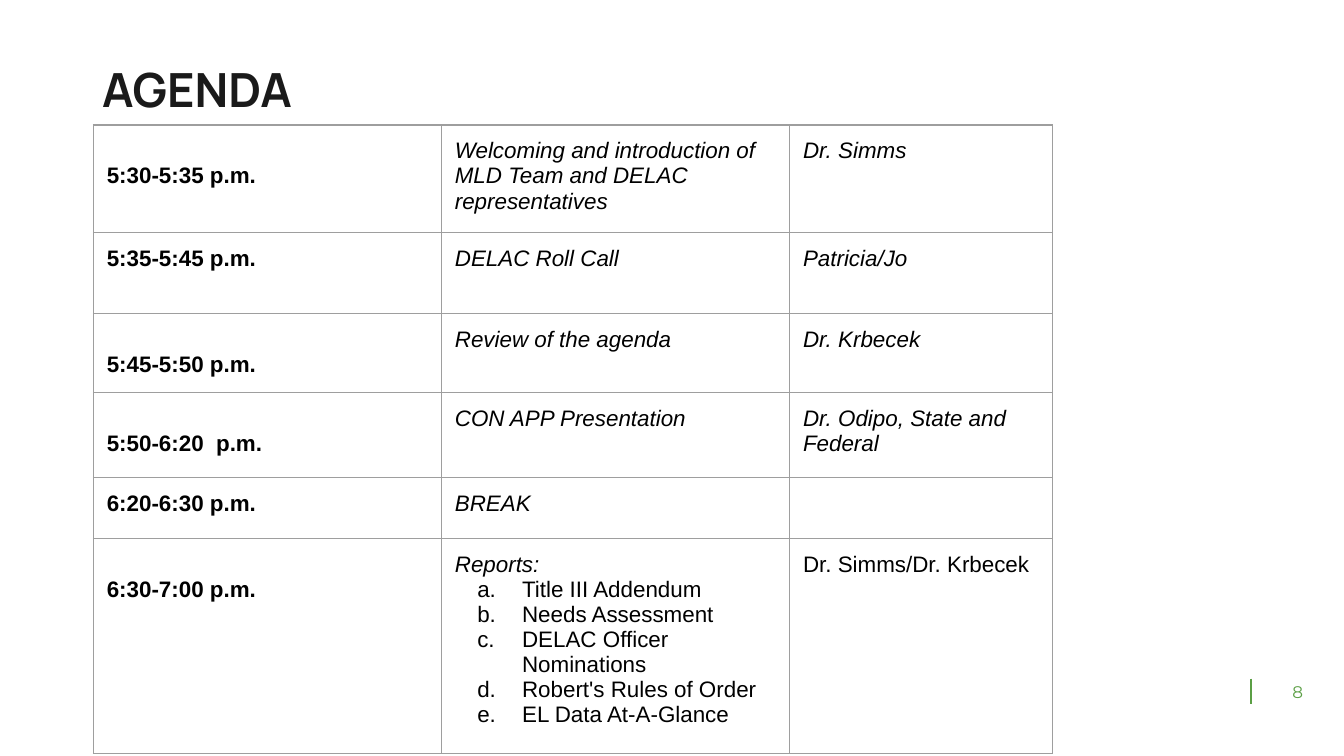
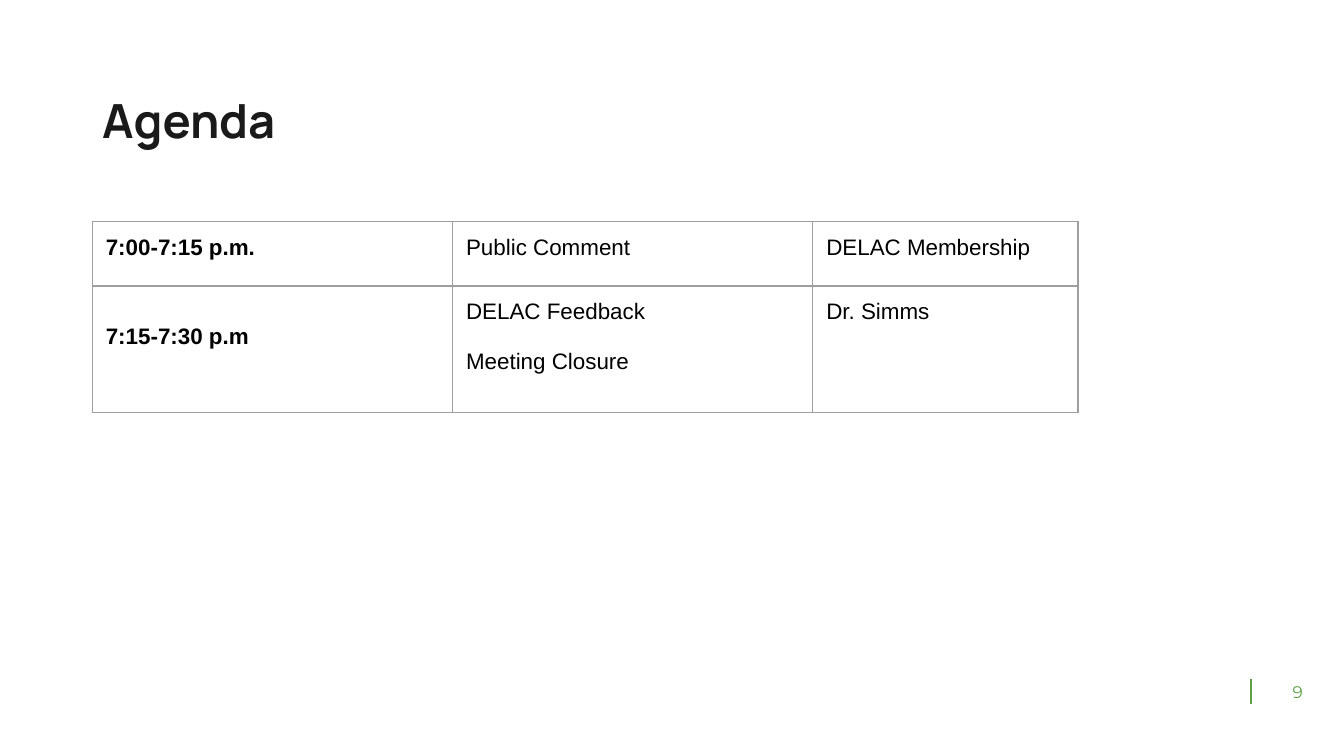
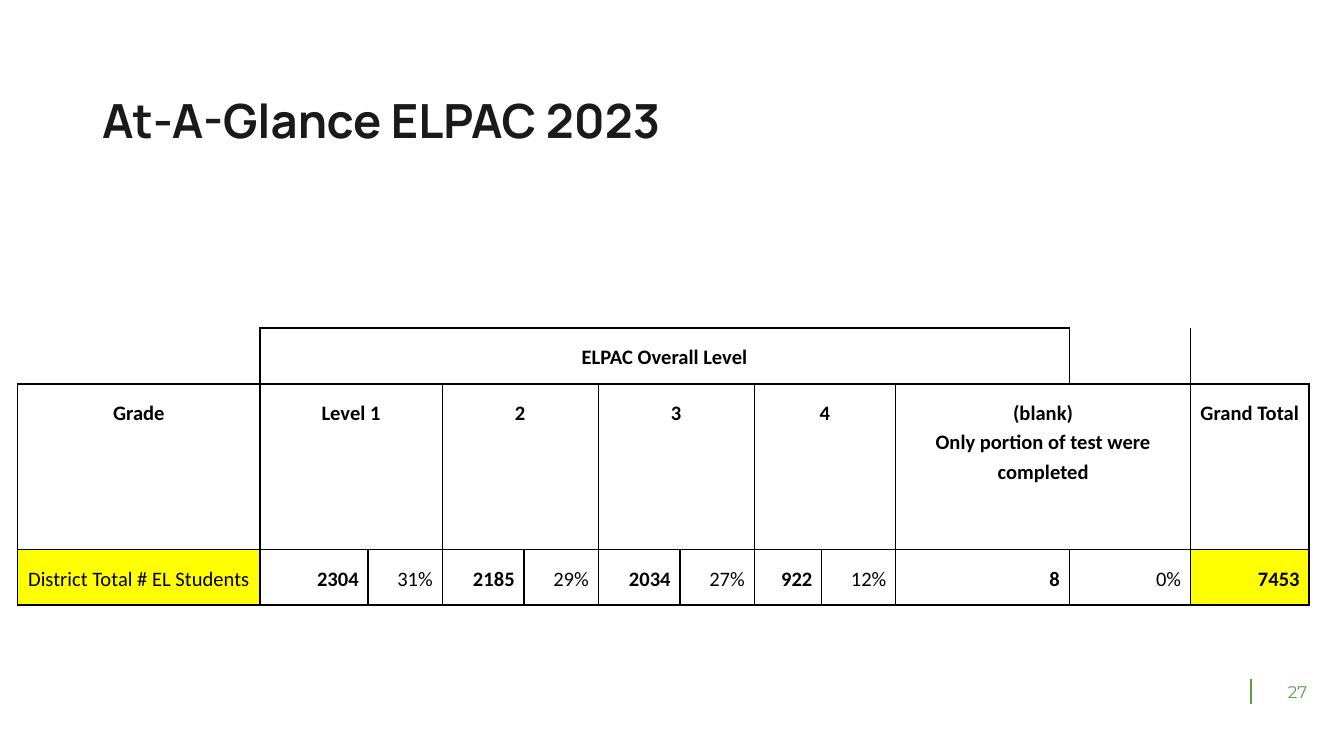
from lxml import etree
from pptx import Presentation
from pptx.dml.color import RGBColor
from pptx.enum.shapes import MSO_CONNECTOR
from pptx.enum.text import MSO_ANCHOR, MSO_AUTO_SIZE, PP_ALIGN
from pptx.oxml.ns import qn
from pptx.util import Pt

STRAIGHT = MSO_CONNECTOR.STRAIGHT
TOP, MIDDLE = MSO_ANCHOR.TOP, MSO_ANCHOR.MIDDLE
NO_AUTOFIT = MSO_AUTO_SIZE.NONE
LEFT, CENTER, RIGHT = PP_ALIGN.LEFT, PP_ALIGN.CENTER, PP_ALIGN.RIGHT

COLORS = {
    "green": "5B9F45",
    "title": "1A1A1A",
    "text": "000000",
    "agenda_border": "9E9E9E",
    "score_border": "000000",
    "highlight": "FFFF00",
}
TITLE_ONLY = 5
AGENDA_LINE = 13.4
AGENDA_INSET = 7.2
FOOTER_LEFT = 670.3
ALL_SIDES = "LRTB"

AGENDA_COLUMNS = [186.5, 186.5, 141]
# Each row: height, time, lines the time is lowered by, topic, presenter
MEETING_ROWS = [
    (54.6, "5:30-5:35 p.m.", 1,
     "Welcoming and introduction of MLD Team and DELAC representatives", "Dr. Simms"),
    (43.4, "5:35-5:45 p.m.", 0, "DELAC Roll Call", "Patricia/Jo"),
    (41.2, "5:45-5:50 p.m.", 1, "Review of the agenda", "Dr. Krbecek"),
    (45.6, "5:50-6:20  p.m.", 1, "CON APP Presentation", "Dr. Odipo, State and Federal"),
    (32.6, "6:20-6:30 p.m.", 0, "BREAK", ""),
    (108.8, "6:30-7:00 p.m.", 1, "Reports:", "Dr. Simms/Dr. Krbecek"),
]
REPORTS = ["Title III Addendum", "Needs Assessment", "DELAC Officer Nominations",
           "Robert's Rules of Order", "EL Data At-A-Glance"]
CLOSING_COLUMNS = [193, 193, 142]
CLOSING_ROWS = [
    (34.6, "7:00-7:15 p.m.", 0, "Public Comment", "DELAC Membership"),
    (68, "7:15-7:30 p.m", 1, "DELAC Feedback", "Dr. Simms"),
]

SCORE_COLUMNS = [129.8, 57.9, 39.7, 43.9, 39.7, 43.9, 39.7, 36.2, 39.7, 92.9, 65, 63.5]
SCORE_ROWS = [30, 88.9, 29.5]
LEVELS = [["Level 1"], ["2"], ["3"], ["4"],
          ["(blank)", "Only portion of test were completed"]]
SCORES = ["2304", "31%", "2185", "29%", "2034", "27%", "922", "12%", "8", "0%", "7453"]


def write_text(frame, text, size=12, font="Arial", color="text", bold=False, italic=False,
               align=LEFT, line_spacing=None, space_before=None, lettered=False):
    """Fill the frame's empty first paragraph, or add a paragraph after the others."""
    paragraph = frame.paragraphs[0]
    if paragraph.runs:
        paragraph = frame.add_paragraph()
    paragraph.alignment = align
    if line_spacing:
        paragraph.line_spacing = line_spacing
    if space_before is not None:
        paragraph.space_before = Pt(space_before)
    if lettered:
        add_letter(paragraph, color)
    run = paragraph.add_run()
    run.text = text
    run.font.size = Pt(size)
    run.font.name = font
    run.font.bold = bold
    run.font.italic = italic
    run.font.color.rgb = RGBColor.from_string(COLORS[color])


def add_letter(paragraph, color):
    properties = paragraph._p.get_or_add_pPr()
    properties.set("marL", str(Pt(36)))
    properties.set("indent", str(Pt(-24)))
    bullet_color = etree.SubElement(properties, qn("a:buClr"))
    etree.SubElement(bullet_color, qn("a:srgbClr"), val=COLORS[color])
    etree.SubElement(properties, qn("a:buAutoNum"), type="alphaLcPeriod")


def set_insets(box, horizontal, vertical):
    """Set the margins of a text frame or a table cell."""
    box.margin_left = box.margin_right = Pt(horizontal)
    box.margin_top = box.margin_bottom = Pt(vertical)


def add_slide(presentation, title, number, title_top=49.7):
    """Add a slide with its title, footer line and page number."""
    slide = presentation.slides.add_slide(presentation.slide_layouts[TITLE_ONLY])
    heading = slide.shapes.title
    heading.left, heading.top = Pt(49.7), Pt(title_top)
    heading.width, heading.height = Pt(620.6), Pt(33.8)
    frame = heading.text_frame
    frame.auto_size = NO_AUTOFIT
    frame.vertical_anchor = TOP
    set_insets(frame, 5, 2.6)
    write_text(frame, title, size=25.2, font="Manrope", color="title", bold=True,
               line_spacing=0.9, space_before=0)

    line = slide.shapes.add_connector(STRAIGHT, Pt(FOOTER_LEFT), Pt(363.6),
                                      Pt(FOOTER_LEFT), Pt(377.3))
    line.line.color.rgb = RGBColor.from_string(COLORS["green"])
    line.line.width = Pt(1)
    etree.SubElement(line._element.spPr, qn("a:effectLst"))

    page = slide.shapes.add_textbox(Pt(FOOTER_LEFT), Pt(362.2), Pt(49.7), Pt(16.6))
    page.text_frame.word_wrap = True
    page.text_frame.vertical_anchor = MIDDLE
    set_insets(page.text_frame, 5, 2.6)
    write_text(page.text_frame, str(number), size=9, font="Montserrat", color="green",
               align=CENTER)
    return slide


def set_borders(cell, color, sides=ALL_SIDES):
    properties = cell._tc.get_or_add_tcPr()
    for position, side in enumerate(ALL_SIDES):
        border = etree.Element(qn(f"a:ln{side}"), w=str(Pt(0.75)))
        if side in sides:
            fill = etree.SubElement(border, qn("a:solidFill"))
            etree.SubElement(fill, qn("a:srgbClr"), val=COLORS[color])
        else:
            etree.SubElement(border, qn("a:noFill"))
        properties.insert(position, border)


def add_table(slide, left, top, columns, rows, border):
    """Add an unfilled table with a border round every cell."""
    table = slide.shapes.add_table(len(rows), len(columns), Pt(left), Pt(top),
                                   Pt(sum(columns)), Pt(sum(rows))).table
    table.first_row = table.horz_banding = False
    for column, width in zip(table.columns, columns):
        column.width = Pt(width)
    for row, height in zip(table.rows, rows):
        row.height = Pt(height)
    for cell in table.iter_cells():
        cell.fill.background()
        set_insets(cell, 0, 0)
        set_borders(cell, border)
    return table


def add_agenda(slide, left, top, columns, rows, italic=False):
    table = add_table(slide, left, top, columns, [row[0] for row in rows], "agenda_border")
    for index, (_, time, lowered, topic, presenter) in enumerate(rows):
        for column, text in enumerate((time, topic, presenter)):
            if not text:
                continue
            cell = table.cell(index, column)
            set_insets(cell, AGENDA_INSET, AGENDA_INSET)
            if column == 0:
                cell.margin_top = Pt(AGENDA_INSET + lowered * AGENDA_LINE)
            slanted = italic and column > 0 and text != "Dr. Simms/Dr. Krbecek"
            write_text(cell.text_frame, text, bold=column == 0, italic=slanted)
    return table


def write_score(cell, *lines, bold=True, align=CENTER):
    set_insets(cell, 5, 7.2)
    for line in lines:
        write_text(cell.text_frame, line, size=11, font="Calibri", bold=bold,
                   align=align, line_spacing=1.15)


def add_scores(slide):
    table = add_table(slide, 9.5, 175.7, SCORE_COLUMNS, SCORE_ROWS, "score_border")
    for column, sides in {0: "RB", 10: "LRB", 11: "LB"}.items():
        cell = table.cell(0, column)
        for border in list(cell._tc.tcPr)[:len(ALL_SIDES)]:
            cell._tc.tcPr.remove(border)
        set_borders(cell, "score_border", sides)

    table.cell(0, 1).merge(table.cell(0, 9))
    write_score(table.cell(0, 1), "ELPAC Overall Level")
    write_score(table.cell(1, 0), "Grade")
    for index, lines in enumerate(LEVELS):
        column = 1 + 2 * index
        table.cell(1, column).merge(table.cell(1, column + 1))
        write_score(table.cell(1, column), *lines)
    write_score(table.cell(1, 11), "Grand Total")

    write_score(table.cell(2, 0), "District Total # EL Students", bold=False)
    for column, score in enumerate(SCORES, start=1):
        write_score(table.cell(2, column), score, bold="%" not in score, align=RIGHT)
    for column in (0, 11):
        fill = table.cell(2, column).fill
        fill.solid()
        fill.fore_color.rgb = RGBColor.from_string(COLORS["highlight"])


def main():
    presentation = Presentation()
    presentation.slide_width, presentation.slide_height = Pt(720), Pt(405)

    slide = add_slide(presentation, "AGENDA", 8, title_top=33.1)
    agenda = add_agenda(slide, 50, 67, AGENDA_COLUMNS, MEETING_ROWS, italic=True)
    for report in REPORTS:
        write_text(agenda.cell(5, 1).text_frame, report, lettered=True)

    slide = add_slide(presentation, "Agenda", 9)
    closing = add_agenda(slide, 49.5, 118.6, CLOSING_COLUMNS, CLOSING_ROWS)
    write_text(closing.cell(1, 1).text_frame, "Meeting Closure", space_before=AGENDA_LINE)

    slide = add_slide(presentation, "At-A-Glance ELPAC 2023", 27)
    add_scores(slide)

    presentation.save("out.pptx")


if __name__ == "__main__":
    main()
